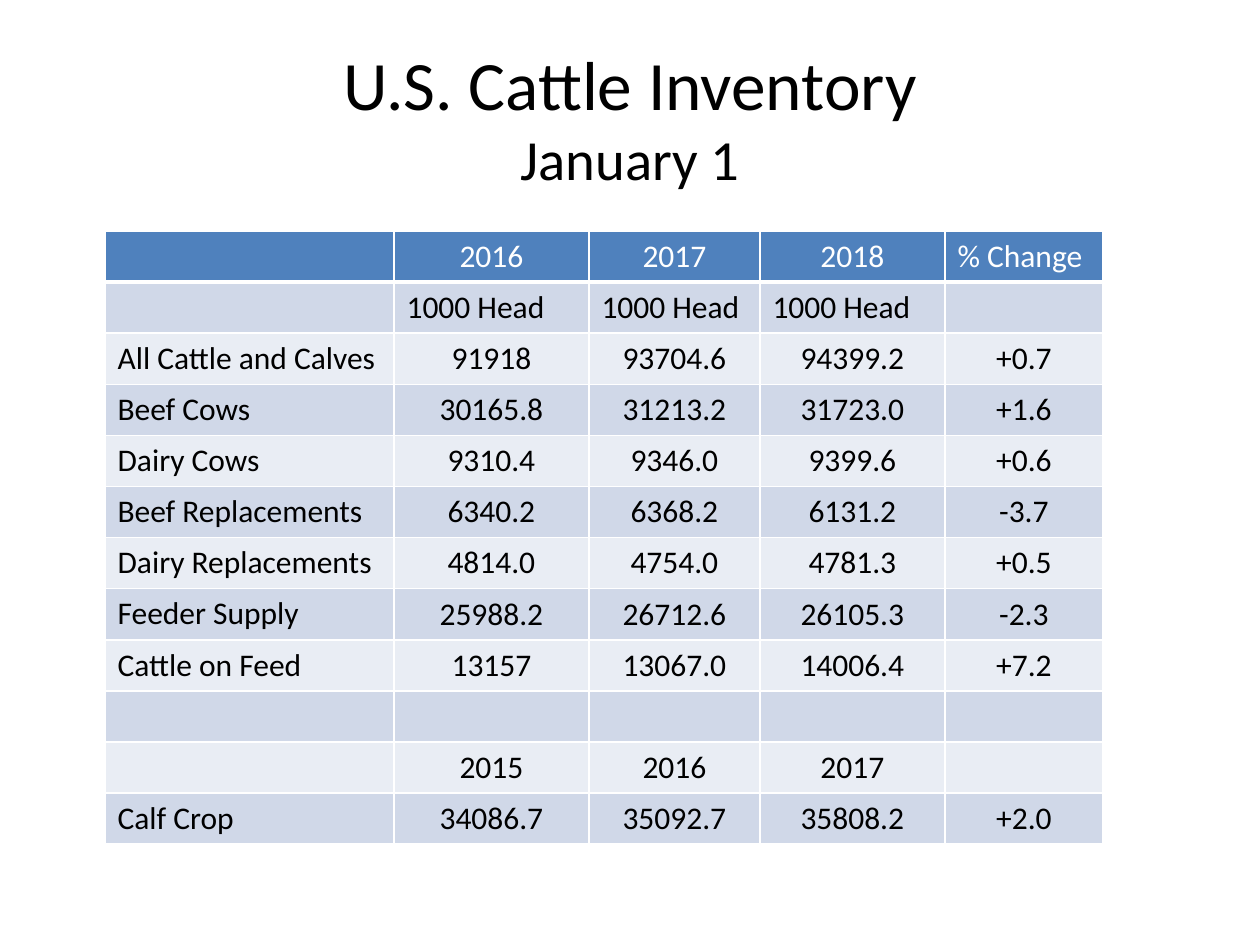
from copy import deepcopy
from lxml import etree
from pptx import Presentation
from pptx import util as u
from pptx.dml.color import RGBColor
from pptx.enum import text
from pptx.oxml import ns

PX = u.Inches(1) / 126
WHITE, BLACK = "FFFFFF", "000000"
HEADER_FILL, BAND_FILLS = "4F81BD", ("E9EDF4", "D0D8E8")


def style_font(font, size, color):
    values = {"name": "Calibri", "size": u.Pt(size), "bold": False}
    for name, value in values.items():
        setattr(font, name, value)
    font.color.rgb = RGBColor.from_string(color)


def set_border(cell, side, points):
    line = etree.SubElement(cell._tc.get_or_add_tcPr(), ns.qn("a:" + side), w=str(u.Pt(points)))
    fill = etree.SubElement(line, ns.qn("a:solidFill"))
    etree.SubElement(fill, ns.qn("a:srgbClr"), val=WHITE)


deck = Presentation()
deck.slide_width, deck.slide_height = u.Inches(10), u.Inches(7.5)
page = deck.slides.add_slide(deck.slide_layouts[5])

# Title: large first line, smaller second line
title = page.shapes.title
title_place = {"left": 63, "top": 38, "width": 1134, "height": 157}
for name, value in title_place.items():
    setattr(title, name, round(value * PX))
title.text_frame.vertical_anchor = text.MSO_ANCHOR.MIDDLE
title.text_frame.text = "U.S. Cattle Inventory\vJanuary 1"
para = title.text_frame.paragraphs[0]
para.alignment = text.PP_ALIGN.CENTER
for span, size in zip(para.runs, (39.6, 32.4)):
    style_font(span.font, size, BLACK)
# The line break takes the size of the first line
para._p.find(ns.qn("a:br")).append(deepcopy(para.runs[0]._r.rPr))

# Inventory table
rows = [
    ("", "2016", "2017", "2018", "% Change"),
    ("", "1000 Head", "1000 Head", "1000 Head", ""),
    ("All Cattle and Calves", "91918", "93704.6", "94399.2", "+0.7"),
    ("Beef Cows", "30165.8", "31213.2", "31723.0", "+1.6"),
    ("Dairy Cows", "9310.4", "9346.0", "9399.6", "+0.6"),
    ("Beef Replacements", "6340.2", "6368.2", "6131.2", "-3.7"),
    ("Dairy Replacements", "4814.0", "4754.0", "4781.3", "+0.5"),
    ("Feeder Supply", "25988.2", "26712.6", "26105.3", "-2.3"),
    ("Cattle on Feed", "13157", "13067.0", "14006.4", "+7.2"),
    ("", "", "", "", ""),
    ("", "2015", "2016", "2017", ""),
    ("Calf Crop", "34086.7", "35092.7", "35808.2", "+2.0"),
]
column_widths = (289, 195, 171, 185, 158)
row_height = 51
frame = page.shapes.add_table(
    len(rows), len(column_widths), round(105 * PX), round(231 * PX),
    round(sum(column_widths) * PX), round(row_height * len(rows) * PX))
table = frame.table
for column, width in zip(table.columns, column_widths):
    column.width = round(width * PX)

for r, row in enumerate(rows):
    table.rows[r].height = round(row_height * PX)
    for c, words in enumerate(row):
        cell = table.cell(r, c)
        # Borders come before the fill in the cell properties
        for side in ("lnL", "lnR", "lnT", "lnB"):
            set_border(cell, side, 3 if r == 0 and side == "lnB" else 1)
        cell.fill.solid()
        cell.fill.fore_color.rgb = RGBColor.from_string(HEADER_FILL if r == 0 else BAND_FILLS[r % 2])
        if r > 1 and c > 0:
            cell.vertical_anchor = text.MSO_ANCHOR.MIDDLE
        para = cell.text_frame.paragraphs[0]
        # Labels, units and the "% Change" heading stay left
        if c > 0 and r != 1 and words != "% Change":
            para.alignment = text.PP_ALIGN.CENTER
        if words:
            span = para.add_run()
            span.text = words
            style_font(span.font, 18, WHITE if r == 0 else BLACK)

deck.save("out.pptx")
